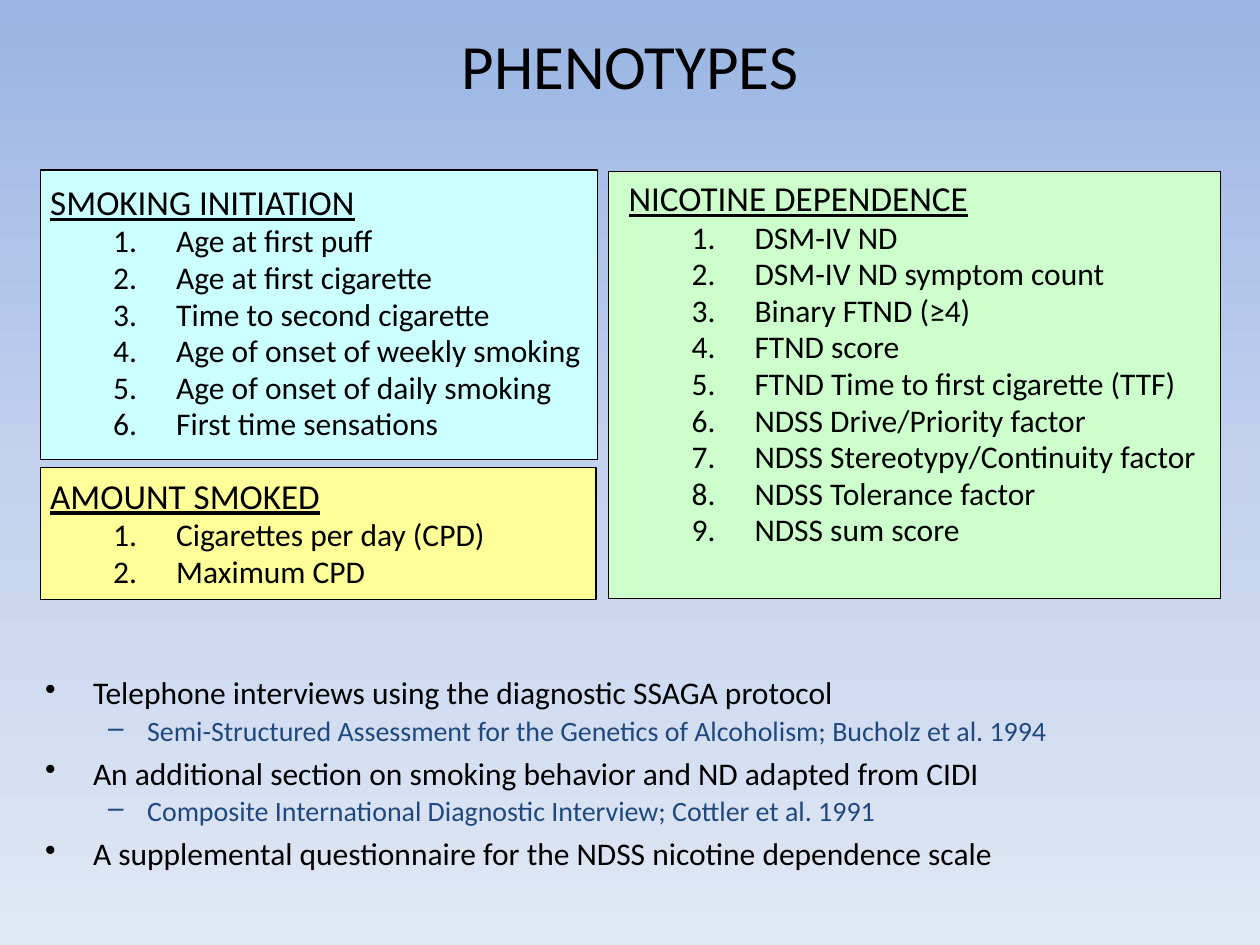
import copy

import pptx
import pptx.dml.color
import pptx.enum.shapes
import pptx.enum.text
import pptx.oxml.ns
import pptx.util
from lxml import etree
from pptx.util import Inches

FONT = "Calibri"
BLACK = "000000"
NAVY = "1F497D"

# Fill, panel box, text box, heading, numbered items
PANELS = [
    ("FFFF99", (0.32, 3.71, 4.41, 1.05), (-0.2, 3.78, 4.62, 1.11), "AMOUNT SMOKED",
     ["Cigarettes per day (CPD)", "Maximum CPD"]),
    ("CCFFFF", (0.32, 1.35, 4.42, 2.3), (-0.2, 1.45, 5.02, 2.54), "SMOKING INITIATION",
     ["Age at first puff", "Age at first cigarette", "Time to second cigarette",
      "Age of onset of weekly smoking", "Age of onset of daily smoking",
      "First time sensations"]),
    ("CCFFCC", (4.83, 1.36, 4.86, 3.39), (4.39, 1.42, 5.58, 3.34), "NICOTINE DEPENDENCE",
     ["DSM-IV ND", "DSM-IV ND symptom count", "Binary FTND (≥4)", "FTND score",
      "FTND Time to first cigarette (TTF)", "NDSS Drive/Priority factor",
      "NDSS Stereotypy/Continuity factor", "NDSS Tolerance factor", "NDSS sum score"]),
]

# Level, text, space before in points (None for 20 % of the line)
SOURCES = [
    (0, "Telephone interviews using the diagnostic SSAGA protocol", None),
    (1, "Semi-Structured Assessment for the Genetics of Alcoholism; Bucholz et al. 1994", None),
    (0, "An additional section on smoking behavior and ND adapted from CIDI", 6),
    (1, "Composite International Diagnostic Interview; Cottler et al. 1991", None),
    (0, "A supplemental questionnaire for the NDSS nicotine dependence scale", 6),
]


def rgb(color):
    return pptx.dml.color.RGBColor.from_string(color)


def add_element(parent, tag, **attributes):
    return etree.SubElement(parent, pptx.oxml.ns.qn(tag), attributes)


def set_background(slide, colors):
    """Fill the slide from top to bottom with evenly spaced gradient colours."""
    fill = slide.background.fill
    fill.gradient()
    fill.gradient_angle = 270
    first = fill.gradient_stops[0]._gs
    for _ in colors[2:]:
        first.addnext(copy.deepcopy(first))
    for i, (stop, color) in enumerate(zip(fill.gradient_stops, colors)):
        stop.position = i / (len(colors) - 1)
        stop.color.rgb = rgb(color)


def add_text_box(shapes, box):
    tf = shapes.add_textbox(*map(Inches, box)).text_frame
    tf.word_wrap = True
    return tf


def add_paragraph(tf, text, size, color=BLACK):
    p = tf.paragraphs[0]
    if p.runs:
        p = tf.add_paragraph()
    p.add_run().text = text
    p.font.name = FONT
    p.font.size = pptx.util.Pt(size)
    p.font.color.rgb = rgb(color)
    return p


def format_list(p, level, left, hanging, line_spacing, before=None, bullet=None):
    """Indent a paragraph and give it spacing and a bullet; "1." numbers it."""
    p.level = level
    p.line_spacing = line_spacing
    pPr = p._p.get_or_add_pPr()
    pPr.set("marL", str(Inches(left)))
    pPr.set("indent", str(Inches(-hanging)))
    if before is None:
        spacing = etree.Element(pptx.oxml.ns.qn("a:spcBef"))
        add_element(spacing, "a:spcPct", val="20000")
        pPr.find(pptx.oxml.ns.qn("a:lnSpc")).addnext(spacing)
    else:
        p.space_before = pptx.util.Pt(before)
    if bullet is None:
        mark = etree.Element(pptx.oxml.ns.qn("a:buNone"))
    elif bullet == "1.":
        mark = etree.Element(pptx.oxml.ns.qn("a:buAutoNum"), type="arabicPeriod")
    else:
        mark = etree.Element(pptx.oxml.ns.qn("a:buChar"), char=bullet)
    pPr.find(pptx.oxml.ns.qn("a:spcBef")).addnext(mark)


def add_title(slide, text):
    tf = add_text_box(slide.shapes, (0.5, 0.01, 9, 1))
    tf.vertical_anchor = pptx.enum.text.MSO_ANCHOR.MIDDLE
    add_paragraph(tf, text, 36).alignment = pptx.enum.text.PP_ALIGN.CENTER


def add_panel(slide, fill, panel_box, text_box, heading, items):
    shapes = slide.shapes.add_group_shape().shapes
    s = shapes.add_shape(pptx.enum.shapes.MSO_SHAPE.RECTANGLE, *map(Inches, panel_box))
    s.shadow.inherit = False
    s.fill.solid()
    s.fill.fore_color.rgb = rgb(fill)
    s.line.color.rgb = rgb(BLACK)
    s.line.width = pptx.util.Pt(0.75)

    tf = add_text_box(shapes, text_box)
    p = add_paragraph(tf, heading, 20)
    p.runs[0].font.underline = True
    format_list(p, 1, 1.08, 0.58, 0.8)
    for item in items:
        format_list(add_paragraph(tf, item, 18), 2, 1.5, 0.5, 0.8, bullet="1.")


def add_sources(slide):
    tf = add_text_box(slide.shapes, (0.26, 5.33, 9.42, 1.97))
    for level, text, before in SOURCES:
        if level == 0:
            p = add_paragraph(tf, text, 18)
            format_list(p, 0, 0.38, 0.38, 0.9, before, "•")
        else:
            p = add_paragraph(tf, text, 16, NAVY)
            format_list(p, 1, 0.81, 0.31, 0.9, before, "–")


def main():
    prs = pptx.Presentation()
    prs.slide_width = Inches(10)
    prs.slide_height = Inches(7.5)
    slide = prs.slides.add_slide(prs.slide_layouts[6])
    set_background(slide, ["9AB5E4", "C2D1ED", "E1E8F5"])
    add_title(slide, "PHENOTYPES")
    add_sources(slide)
    for panel in PANELS:
        add_panel(slide, *panel)
    prs.save("out.pptx")


if __name__ == "__main__":
    main()
